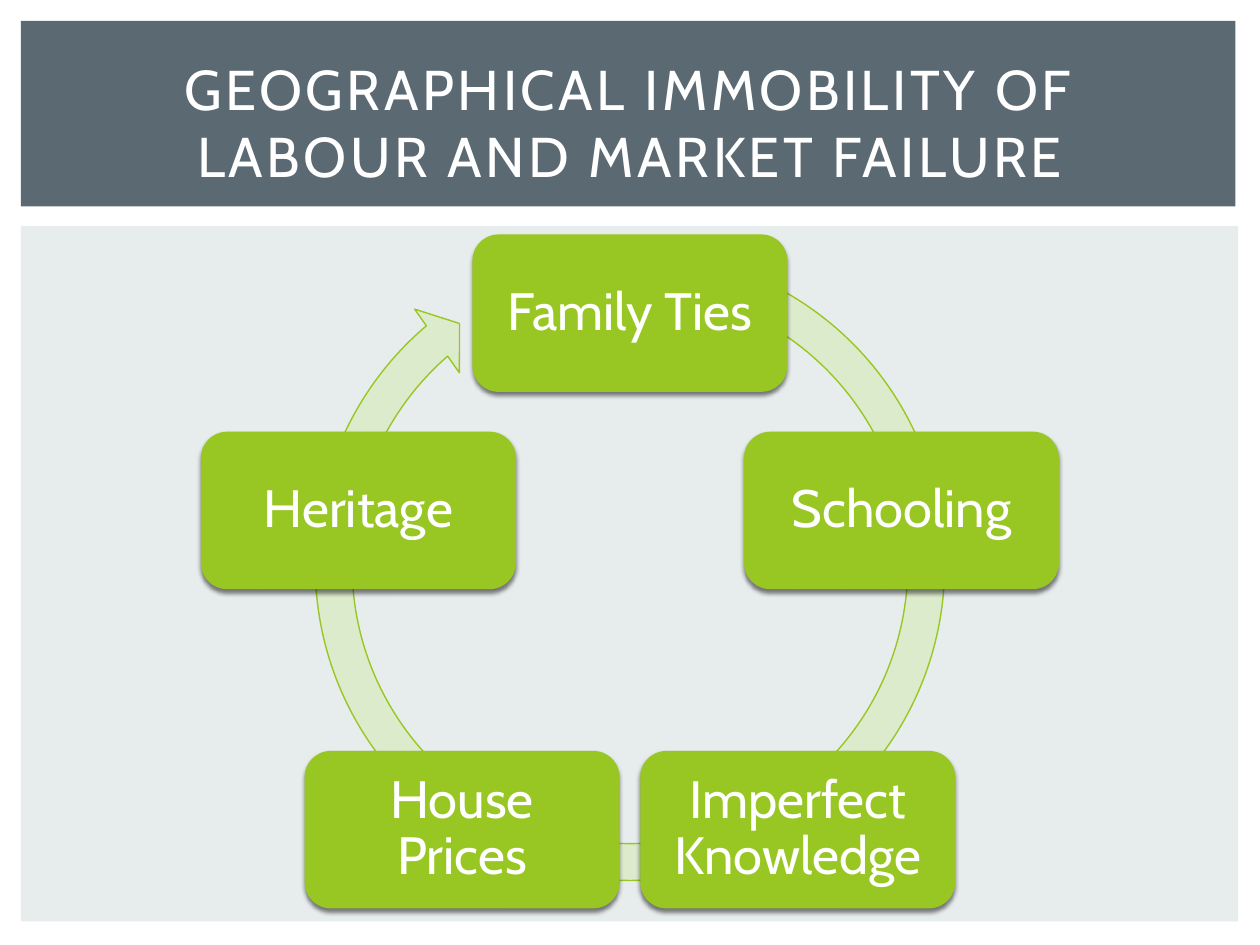
from math import cos, pi, sin

from lxml.etree import SubElement
from pptx import Presentation
from pptx.dml.color import RGBColor
from pptx.enum.shapes import MSO_SHAPE as SHAPE
from pptx.enum.text import MSO_ANCHOR as ANCHOR, PP_ALIGN as ALIGN
from pptx.oxml.ns import qn
from pptx.util import Pt

WHITE = RGBColor(0xFF, 0xFF, 0xFF)
SLATE = RGBColor(0x5B, 0x69, 0x73)
MIST = RGBColor(0xE7, 0xEC, 0xED)
GREEN = RGBColor(0x98, 0xC7, 0x23)
PALE_GREEN = RGBColor(0xDD, 0xEB, 0xCD)


def add_shape(kind, x, y, w, h, color):
    sp = s.shapes.add_shape(kind, Pt(x), Pt(y), Pt(w), Pt(h))
    sp.shadow.inherit = False
    sp.fill.solid()
    sp.fill.fore_color.rgb = color
    sp.line.fill.background()
    return sp


def set_text(sp, text, size, frame, para):
    tf = sp.text_frame
    for name, value in frame.items():
        setattr(tf, name, value)
    p = tf.paragraphs[0]
    for name, value in para.items():
        setattr(p, name, value)
    r = p.add_run()
    r.text = text
    for name, value in {"name": "Cabin", "size": Pt(size)}.items():
        setattr(r.font, name, value)
    r.font.color.rgb = WHITE
    return r


prs = Presentation()
prs.slide_width, prs.slide_height = Pt(720), Pt(540)
s = prs.slides.add_slide(prs.slide_layouts[6])

add_shape(SHAPE.RECTANGLE, 12, 129, 695.5, 397.5, MIST)
add_shape(SHAPE.RECTANGLE, 12, 12, 694, 106, SLATE)

title = s.shapes.add_textbox(Pt(30), Pt(28), Pt(660), Pt(83))
r = set_text(
    title, "GEOGRAPHICAL IMMOBILITY OF LABOUR AND MARKET FAILURE", 32,
    {"word_wrap": True, "vertical_anchor": ANCHOR.MIDDLE,
     "margin_left": Pt(20), "margin_right": Pt(20)},
    {"alignment": ALIGN.CENTER},
)
r.font._element.set("spc", "200")

arrow = add_shape(SHAPE.CIRCULAR_ARROW, 168.5, 131.8, 383, 383, PALE_GREEN)
for i, value in enumerate([0.055, 3.307, 137.617, 173.946, 0.058]):
    arrow.adjustments[i] = value
arrow.line.color.rgb = GREEN
arrow.line.width = Pt(0.79)

NODES = ["Family Ties", "Schooling", "Imperfect Knowledge", "House Prices", "Heritage"]
CX, CY, RADIUS = 360, 342.1, 163.15
W, H = 180, 90
node_frame = {"word_wrap": True, "vertical_anchor": ANCHOR.MIDDLE}
node_frame.update({f"margin_{side}": Pt(8.64) for side in ("left", "right", "top", "bottom")})
node_para = {"alignment": ALIGN.CENTER, "line_spacing": 0.9, "space_after": Pt(10.5)}

for i, text in enumerate(NODES):
    angle = 2 * pi * i / len(NODES)
    x = CX + RADIUS * sin(angle) - W / 2
    y = CY - RADIUS * cos(angle) - H / 2
    sp = add_shape(SHAPE.ROUNDED_RECTANGLE, x, y, W, H, GREEN)
    effects = sp._element.spPr.find(qn("a:effectLst"))
    shadow = SubElement(effects, qn("a:outerShdw"), blurRad=str(Pt(2.5)),
                        dist=str(Pt(2)), dir="5400000", rotWithShape="0")
    black = SubElement(shadow, qn("a:srgbClr"), val="000000")
    SubElement(black, qn("a:alpha"), val="50000")
    set_text(sp, text, 30, node_frame, node_para)

prs.save("out.pptx")
